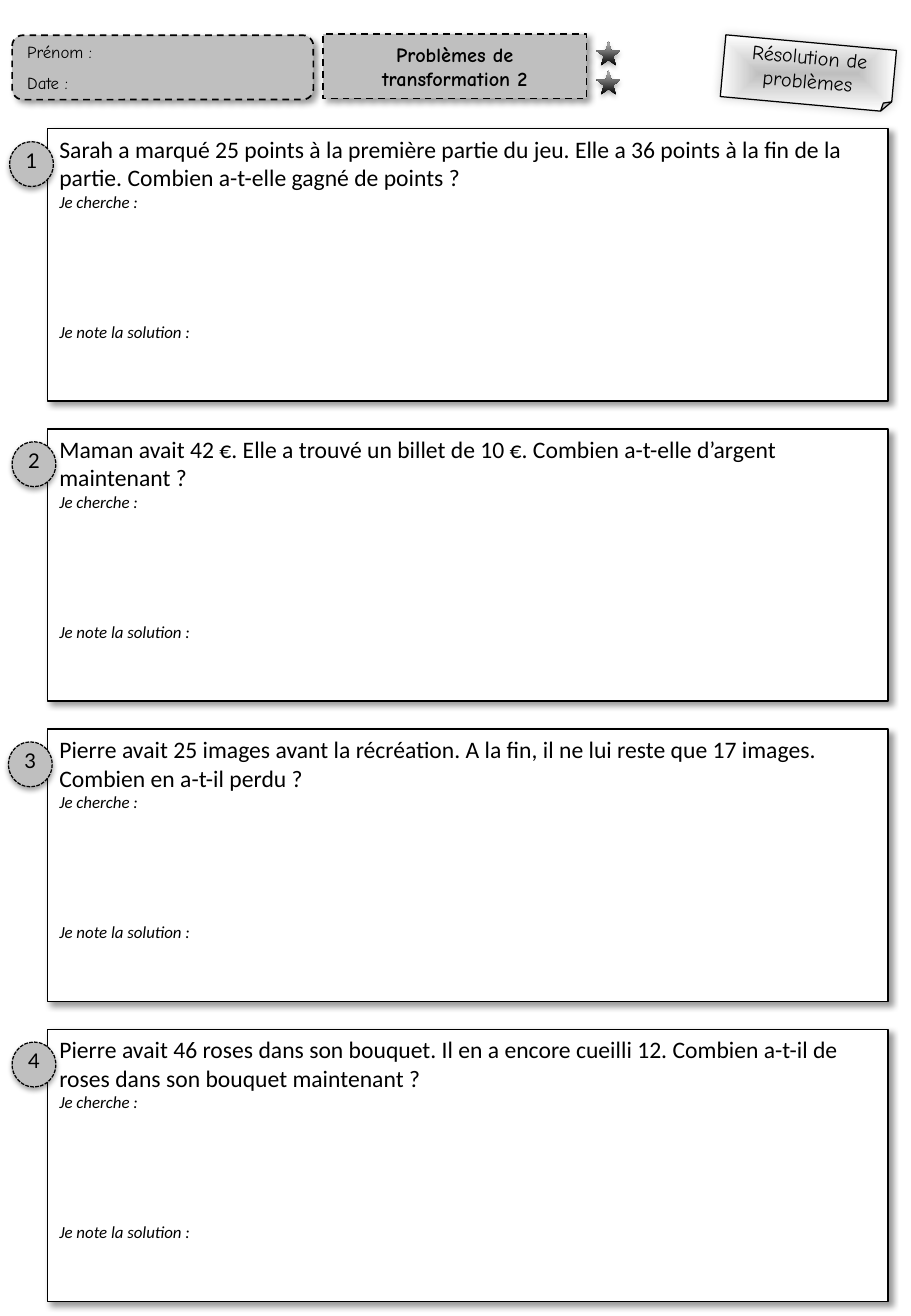
from dataclasses import dataclass
from typing import Any, Optional

from lxml import etree
from pptx import Presentation
from pptx.dml.color import RGBColor
from pptx.enum.dml import MSO_LINE
from pptx.enum.shapes import MSO_SHAPE
from pptx.enum.text import MSO_ANCHOR, MSO_AUTO_SIZE, PP_ALIGN
from pptx.oxml.ns import qn
from pptx.util import Pt

RECT, ROUND, OVAL = MSO_SHAPE.RECTANGLE, MSO_SHAPE.ROUNDED_RECTANGLE, MSO_SHAPE.OVAL
NOTE, STAR = MSO_SHAPE.FOLDED_CORNER, MSO_SHAPE.STAR_5_POINT
DASH, DOTS = MSO_LINE.DASH, MSO_LINE.SQUARE_DOT
TOP, MIDDLE = MSO_ANCHOR.TOP, MSO_ANCHOR.MIDDLE
LEFT, CENTER = PP_ALIGN.LEFT, PP_ALIGN.CENTER

COLORS = {"ink": "000000", "paper": "FFFFFF", "gray": "BFBFBF", "silver": "BDBDBD"}


@dataclass(frozen=True)
class Shadow:
    alpha: int
    blur: float
    dist: float
    angle: int


@dataclass(frozen=True)
class Look:
    fill: tuple[str, ...]
    shadow: Shadow
    line: float = 0
    dash: Any = None


@dataclass(frozen=True)
class Para:
    text: str
    font: dict[str, Any]
    align: Any = LEFT
    before: float = 0
    after: float = 0


@dataclass(frozen=True)
class Problem:
    text: str
    badge: float


DEEP = Shadow(40, 4, 3, 45)
SOFT = Shadow(35, 3.1, 1.8, 90)
GLOW = Shadow(20, 6, 0, 315)

LABEL = Look(("gray",), DEEP, 1, DASH)
CARD = Look(("paper",), DEEP, 0.75)
BADGE = Look(("gray",), SOFT, 0.75, DOTS)
MEMO = Look(("gray", "paper"), GLOW, 0.75)
METAL = Look(("ink", "silver"), SOFT)

HEAD = {"name": "Comic Neue", "size": Pt(12), "bold": True}
TAG = {"name": "Comic Neue", "size": Pt(12)}
FIELD = {"name": "Comic Neue", "size": Pt(10)}
ASK = {"name": "Calibri", "size": Pt(14)}
HINT = {"name": "Calibri", "size": Pt(10), "italic": True}
COUNT = {"name": "Lato", "size": Pt(12)}

PROBLEMS = [
    Problem("Sarah a marqué 25 points à la première partie du jeu. Elle a 36 points "
            "à la fin de la partie. Combien a-t-elle gagné de points ?", 5.76),
    Problem("Maman avait 42 €. Elle a trouvé un billet de 10 €. "
            "Combien a-t-elle d’argent maintenant ?", 7.2),
    Problem("Pierre avait 25 images avant la récréation. A la fin, il ne lui reste "
            "que 17 images. Combien en a-t-il perdu ?", 5.04),
    Problem("Pierre avait 46 roses dans son bouquet. Il en a encore cueilli 12. "
            "Combien a-t-il de roses dans son bouquet maintenant ?", 7.2),
]
FIRST, PITCH = 76.32, 177.84


def color(name: str) -> RGBColor:
    return RGBColor.from_string(COLORS[name])


def shade(shape: Any, cast: Shadow) -> None:
    """Give the shape an outer shadow in place of the theme's own."""
    shape.shadow.inherit = False
    group = shape._element.spPr.find(qn("a:effectLst"))
    outer = etree.SubElement(group, qn("a:outerShdw"), blurRad=str(Pt(cast.blur)),
                             dist=str(Pt(cast.dist)), dir=str(cast.angle * 60000),
                             algn="ctr", rotWithShape="0")
    tint = etree.SubElement(outer, qn("a:srgbClr"), val=COLORS["ink"])
    etree.SubElement(tint, qn("a:alpha"), val=str(cast.alpha * 1000))


def dress(shape: Any, look: Look) -> None:
    """Set fill, outline and shadow; two fill colours make a gradient."""
    if len(look.fill) == 1:
        shape.fill.solid()
        shape.fill.fore_color.rgb = color(look.fill[0])
    else:
        shape.fill.gradient()
        shape.fill.gradient_angle = 90
        for stop, name in zip(shape.fill.gradient_stops, look.fill):
            stop.color.rgb = color(name)
    if look.line:
        shape.line.color.rgb = color("ink")
        shape.line.width = Pt(look.line)
        if look.dash:
            shape.line.dash_style = look.dash
    else:
        shape.line.fill.background()
    shade(shape, look.shadow)


def center_fade(shape: Any) -> None:
    """Turn a linear gradient into one that spreads from the middle."""
    grad = shape._element.spPr.find(qn("a:gradFill"))
    grad.remove(grad.find(qn("a:lin")))
    way = etree.SubElement(grad, qn("a:path"), path="shape")
    etree.SubElement(way, qn("a:fillToRect"), l="50000", t="50000", r="50000", b="50000")


def write(shape: Any, paras: list[Para], anchor: Any = MIDDLE,
          side: float = 7.2, edge: float = 3.6) -> None:
    frame = shape.text_frame
    form = {"word_wrap": True, "auto_size": MSO_AUTO_SIZE.NONE, "vertical_anchor": anchor,
            "margin_left": Pt(side), "margin_right": Pt(side),
            "margin_top": Pt(edge), "margin_bottom": Pt(edge)}
    for key, value in form.items():
        setattr(frame, key, value)
    for i, para in enumerate(paras):
        line = frame.add_paragraph() if i else frame.paragraphs[0]
        line.alignment = para.align
        line.space_before, line.space_after = Pt(para.before), Pt(para.after)
        run = line.add_run()
        run.text = para.text
        run.font.color.rgb = color("ink")
        for key, value in para.font.items():
            setattr(run.font, key, value)


def draw(slide: Any, kind: Any, box: tuple[float, ...], look: Look,
         paras: Optional[list[Para]] = None, **form: Any) -> Any:
    shape = slide.shapes.add_shape(kind, *map(Pt, box))
    dress(shape, look)
    if paras:
        write(shape, paras, **form)
    return shape


def set_title(slide: Any) -> None:
    title = slide.shapes.title
    spots = dict(zip(("left", "top", "width", "height"), (191.52, 20.16, 156.24, 38.16)))
    for key, value in spots.items():
        setattr(title, key, Pt(value))
    shape = etree.SubElement(title._element.spPr, qn("a:prstGeom"), prst="roundRect")
    etree.SubElement(shape, qn("a:avLst"))
    dress(title, LABEL)
    write(title, [Para("Problèmes de transformation 2", HEAD, CENTER)])


def add_header(slide: Any) -> None:
    set_title(slide)
    fields = [Para(text, FIELD, after=6) for text in ("Prénom :", "Date :")]
    draw(slide, ROUND, (7.2, 20.88, 178.56, 38.16), LABEL, fields, edge=0)
    memo = draw(slide, NOTE, (428.4, 25.2, 101.52, 36.72), MEMO,
                [Para("Résolution de problèmes", TAG, CENTER)])
    center_fade(memo)
    memo.rotation = 5.2
    for top in (24.48, 41.76):
        draw(slide, STAR, (353.52, top, 14.4, 14.4), METAL)


def add_problem(slide: Any, rank: int, task: Problem) -> None:
    top = FIRST + rank * PITCH
    paras = [Para(task.text, ASK), Para("Je cherche :", HINT),
             Para("Je note la solution :", HINT, before=65)]
    draw(slide, RECT, (28.08, top, 498.24, 161.28), CARD, paras, anchor=TOP)
    draw(slide, OVAL, (task.badge, top + 7.6, 25.92, 26.64), BADGE,
         [Para(str(rank + 1), COUNT, CENTER)], anchor=TOP, side=0, edge=0)


def main() -> None:
    deck = Presentation()
    deck.slide_width, deck.slide_height = Pt(540), Pt(779.76)
    slide = deck.slides.add_slide(deck.slide_layouts[5])
    add_header(slide)
    for rank, task in enumerate(PROBLEMS):
        add_problem(slide, rank, task)
    deck.save("out.pptx")


if __name__ == "__main__":
    main()
